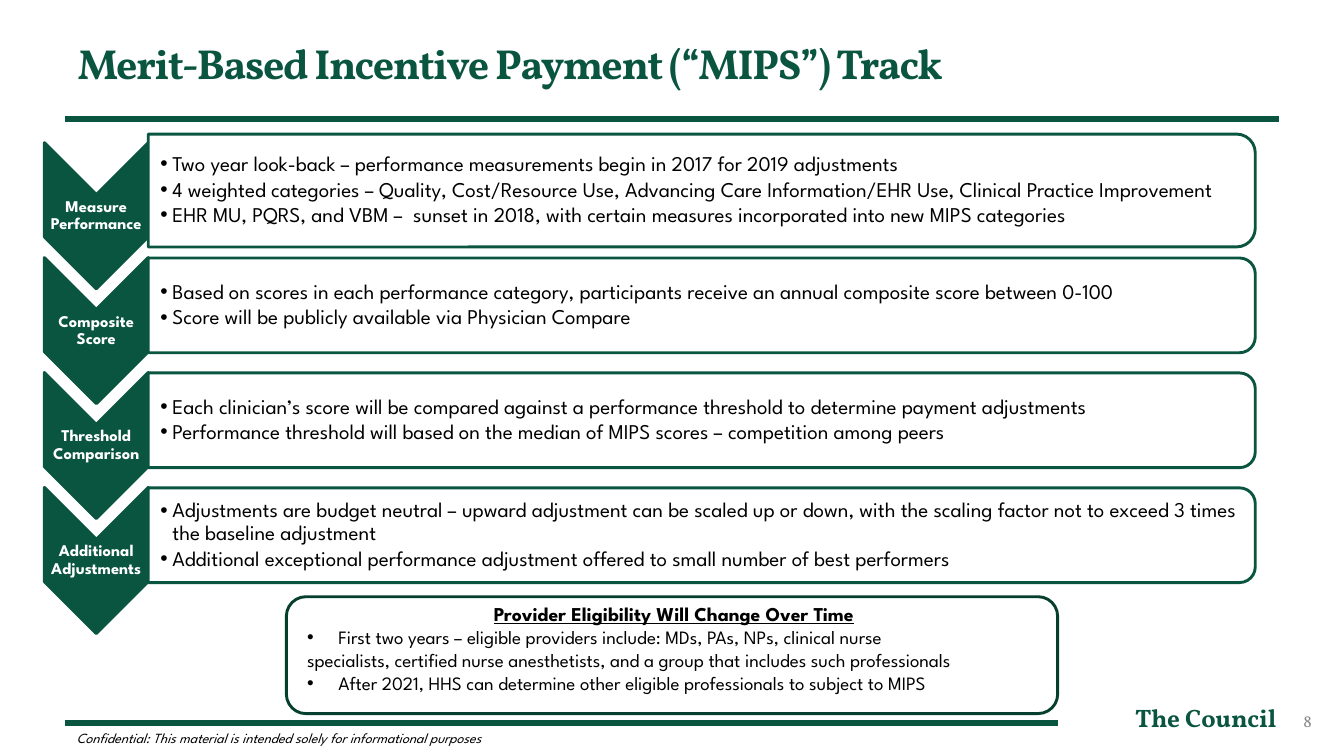
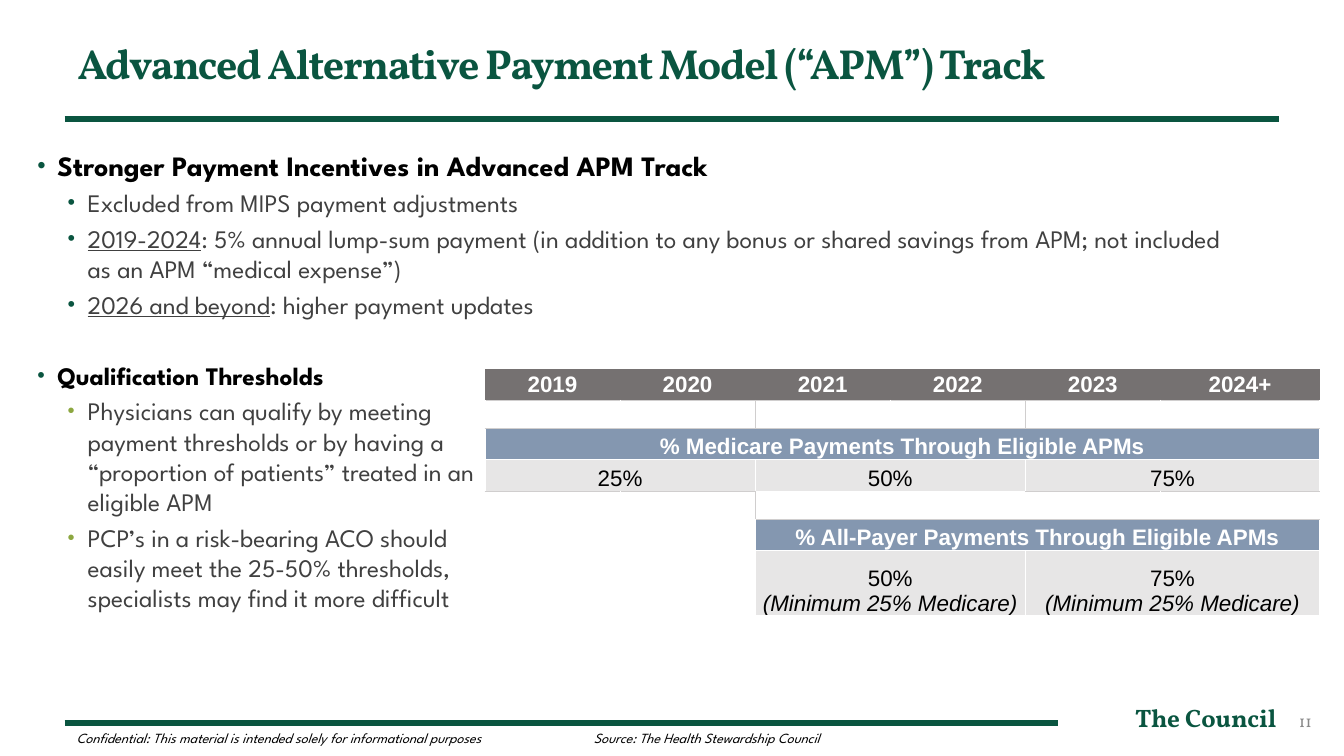
from lxml.etree import SubElement
from pptx import Presentation
from pptx.dml.color import RGBColor
from pptx.enum.shapes import MSO_CONNECTOR, MSO_SHAPE
from pptx.enum.text import MSO_ANCHOR, MSO_AUTO_SIZE, PP_ALIGN
from pptx.oxml.ns import qn
from pptx.util import Inches, Pt

GREEN = RGBColor(0x0A, 0x55, 0x40)
DARK_GREEN = RGBColor(0x07, 0x3F, 0x2F)
LIME = RGBColor(0x8C, 0xA7, 0x40)
BLACK = RGBColor(0x00, 0x00, 0x00)
WHITE = RGBColor(0xFF, 0xFF, 0xFF)
TEXT_GREY = RGBColor(0x40, 0x40, 0x40)
NUMBER_GREY = RGBColor(0x89, 0x89, 0x89)
HEADER_GREY = RGBColor(0x75, 0x71, 0x71)
CELL_GREY = RGBColor(0xE7, 0xE6, 0xE6)
BORDER_GREY = RGBColor(0xD0, 0xCE, 0xCE)
BAND_BLUE = RGBColor(0x84, 0x97, 0xB0)

SERIF = "Vollkorn"
SANS = "League Spartan"
TABLE_FONT = "Arial"
PLAIN_TABLE_STYLE = "{2D5ABB26-0587-4C30-8999-92F81FD0307C}"

STEPS = [
    ("Measure Performance", 1.12, [
        "Two year look-back – performance measurements begin in 2017 for 2019 adjustments",
        "4 weighted categories – Quality, Cost/Resource Use, Advancing Care Information/EHR Use, "
        "Clinical Practice Improvement",
        "EHR MU, PQRS, and VBM –  sunset in 2018, with certain measures incorporated into new "
        "MIPS categories"]),
    ("Composite Score", 0.94, [
        "Based on scores in each performance category, participants receive an annual composite "
        "score between 0-100",
        "Score will be publicly available via Physician Compare"]),
    ("Threshold Comparison", 0.94, [
        "Each clinician’s score will be compared against a performance threshold to determine "
        "payment adjustments",
        "Performance threshold will based on the median of MIPS scores – competition among peers"]),
    ("Additional Adjustments", 0.94, [
        "Adjustments are budget neutral – upward adjustment can be scaled up or down, with the "
        "scaling factor not to exceed 3 times the baseline adjustment",
        "Additional exceptional performance adjustment offered to small number of best performers"]),
]

ELIGIBILITY = [  # text, bulleted
    ("First two years – eligible providers include: MDs, PAs, NPs, clinical nurse", True),
    ("specialists, certified nurse anesthetists, and a group that includes such professionals", False),
    ("After 2021, HHS can determine other eligible professionals to subject to MIPS", True),
]

INCENTIVES = [  # underlined lead, rest
    ("", "Excluded from MIPS payment adjustments"),
    ("2019-2024", ": 5% annual lump-sum payment (in addition to any bonus or shared savings from "
                  "APM; not included as an APM “medical expense”)"),
    ("2026 and beyond", ": higher payment updates"),
]

QUALIFICATION = [
    ("", "Physicians can qualify by meeting payment thresholds or by having a “proportion of "
         "patients” treated in an eligible APM"),
    ("", "PCP’s in a risk-bearing ACO should easily meet the 25-50% thresholds, specialists may "
         "find it more difficult"),
]

MINIMUM = "(Minimum 25% Medicare)"
COLUMN_WIDTHS = [1.34] * 5 + [1.58]
ROW_HEIGHTS = [0.31, 0.28, 0.31, 0.31, 0.28, 0.31, 0.65]
MERGED_CELLS = [  # row, first column, columns spanned, fill, lines
    (2, 0, 6, BAND_BLUE, ["% Medicare Payments Through Eligible APMs"]),
    (3, 0, 2, CELL_GREY, ["25%"]),
    (3, 2, 2, CELL_GREY, ["50%"]),
    (3, 4, 2, CELL_GREY, ["75%"]),
    (5, 2, 4, BAND_BLUE, ["% All-Payer Payments Through Eligible APMs"]),
    (6, 2, 2, CELL_GREY, ["50%", MINIMUM]),
    (6, 4, 2, CELL_GREY, ["75%", MINIMUM]),
]
# Grey table rules: columns under each row edge, column edges within each row
GREY_ROW_EDGES = {1: range(6), 2: range(6), 4: (0, 1, 4, 5), 5: range(2, 6)}
GREY_COLUMN_EDGES = {1: (2, 4), 4: (2,)}


# Text
def style(font, name, size, color, bold=False, italic=False):
    font.name, font.size = name, Pt(size)
    font.bold, font.italic = bold, italic
    font.color.rgb = color


def next_paragraph(frame):
    return frame.add_paragraph() if frame.text else frame.paragraphs[0]


def set_indent(para, left, first=0):
    properties = para._p.get_or_add_pPr()
    properties.set("marL", str(Inches(left)))
    properties.set("indent", str(Inches(first)))
    return properties


def add_bullet(para, left, hang, color=None, percent=100):
    properties = set_indent(para, left, -hang)
    if color is not None:
        SubElement(SubElement(properties, qn("a:buClr")), qn("a:srgbClr"), val=str(color))
    SubElement(properties, qn("a:buSzPct"), val=str(percent * 1000))
    SubElement(properties, qn("a:buFont"), typeface="Arial")
    SubElement(properties, qn("a:buChar"), char="•")


def set_frame(frame, anchor=MSO_ANCHOR.TOP, margins=(0.1, 0.05, 0.1, 0.05)):
    frame.word_wrap = True
    frame.auto_size = MSO_AUTO_SIZE.NONE
    frame.vertical_anchor = anchor
    (frame.margin_left, frame.margin_top,
     frame.margin_right, frame.margin_bottom) = map(Inches, margins)
    return frame


def add_text_box(slide, area, **settings):
    box = slide.shapes.add_textbox(*map(Inches, area))
    return set_frame(box.text_frame, **settings)


def add_label(slide, area, text, font, align=PP_ALIGN.LEFT, **settings):
    para = add_text_box(slide, area, **settings).paragraphs[0]
    para.text, para.alignment = text, align
    style(para.font, *font)
    return para


def add_footnote(slide, left, width, text):
    add_label(slide, (left, 7.24, width, 0.17), text, (SANS, 10, BLACK, False, True),
              margins=(0, 0, 0, 0))


# Shapes
def place(shape, area):
    shape.left, shape.top, shape.width, shape.height = map(Inches, area)


def add_outlined(slide, kind, area, line, fill=None):
    shape = slide.shapes.add_shape(kind, *map(Inches, area))
    shape.shadow.inherit = False
    shape.line.color.rgb, shape.line.width = line, Pt(2.08)
    if fill is None:
        shape.fill.background()
    else:
        shape.fill.solid()
        shape.fill.fore_color.rgb = fill
    return shape


def add_turned(slide, kind, left, middle, width, height, fill):
    """Add a shape turned a quarter right; the lengths are those seen on the slide."""
    area = (left + (width - height) / 2, middle - width / 2, height, width)
    add_outlined(slide, kind, area, GREEN, fill).rotation = 90


def add_rule(slide, y, right):
    rule = slide.shapes.add_connector(
        MSO_CONNECTOR.STRAIGHT, Inches(0.64), Inches(y), Inches(right), Inches(y))
    rule.line.color.rgb, rule.line.width = GREEN, Pt(4.5)
    SubElement(rule._element.spPr, qn("a:effectLst"))


def add_page(deck, layout, title, number):
    """Add a slide with the shared title, rules and footer."""
    page = deck.slides.add_slide(deck.slide_layouts.get_by_name(layout))
    add_rule(page, 7.17, 10.49)
    add_rule(page, 1.18, 12.69)
    add_label(page, (10.33, 6.92, 2.43, 0.4), "The Council", (SERIF, 18, GREEN, True),
              PP_ALIGN.RIGHT)
    add_label(page, (10, 6.95, 3.11, 0.4), number, (SERIF, 12, NUMBER_GREY),
              PP_ALIGN.RIGHT, anchor=MSO_ANCHOR.MIDDLE)
    add_footnote(page, 0.76, 5,
                 "Confidential: This material is intended solely for informational purposes")
    heading = page.shapes.title
    place(heading, (0.67, 0.08, 12, 1.08))
    para = set_frame(heading.text_frame, MSO_ANCHOR.MIDDLE).paragraphs[0]
    para.text, para.alignment = title, PP_ALIGN.LEFT
    style(para.font, SERIF, 30, GREEN, True)
    para.font._rPr.set("spc", "-100")
    return page


# Merit-based track
def add_step(slide, middle, label, panel_height, points):
    add_turned(slide, MSO_SHAPE.CHEVRON, 0.44, middle, 1.03, 1.45, GREEN)
    add_label(slide, (0.44, middle - 0.22, 1.03, 0.44), label, (SANS, 11.7, WHITE, True),
              PP_ALIGN.CENTER, anchor=MSO_ANCHOR.MIDDLE,
              margins=(0.01,) * 4).line_spacing = 0.9
    panel_middle = middle - 0.25
    add_turned(slide, MSO_SHAPE.ROUND_2_SAME_RECTANGLE, 1.47, panel_middle,
               10.98, panel_height, WHITE)
    frame = add_text_box(slide, (1.47, panel_middle - 0.5, 10.93, 1),
                         anchor=MSO_ANCHOR.MIDDLE, margins=(0.12, 0.01, 0.01, 0.01))
    for point in points:
        para = next_paragraph(frame)
        para.text = point
        para.line_spacing, para.space_after = 0.9, Pt(2)
        add_bullet(para, 0.12, 0.12)
        style(para.font, SANS, 15, BLACK)


def add_eligibility(slide):
    box = add_outlined(slide, MSO_SHAPE.ROUNDED_RECTANGLE, (2.84, 5.92, 7.65, 1.16), DARK_GREEN)
    frame = set_frame(box.text_frame, margins=(0, 0, 0.11, 0))
    heading = frame.paragraphs[0]
    heading.text, heading.alignment = "Provider Eligibility Will Change Over Time", PP_ALIGN.CENTER
    set_indent(heading, 0.15)
    style(heading.font, SANS, 14, BLACK, True)
    heading.font.underline = True
    for text, bulleted in ELIGIBILITY:
        para = frame.add_paragraph()
        para.text, para.alignment = text, PP_ALIGN.LEFT
        if bulleted:
            add_bullet(para, 0.46, 0.31)
        else:
            set_indent(para, 0.15)
        style(para.font, SANS, 13.5, BLACK)


# Alternative payment track
def fill_list(body, area, heading, heading_size, points, point_bullet):
    place(body, area)
    frame = set_frame(body.text_frame)
    para = frame.paragraphs[0]
    para.text, para.space_before = heading, Pt(4)
    add_bullet(para, 0.2, 0.2, GREEN, 85)
    style(para.font, SANS, heading_size, BLACK, True)
    for lead, rest in points:
        para = frame.add_paragraph()
        para.level, para.space_before = 1, Pt(4)
        add_bullet(para, 0.5, 0.2, *point_bullet)
        style(para.font, SANS, 18, TEXT_GREY)
        if lead:
            span = para.add_run()
            span.text, span.font.underline = lead, True
        para.add_run().text = rest


def fill_cell(cell, lines, fill, color, bold, anchor):
    cell.fill.solid()
    cell.fill.fore_color.rgb = fill
    cell.vertical_anchor = anchor
    for line in lines:
        para = next_paragraph(cell.text_frame)
        para.text, para.alignment = line, PP_ALIGN.CENTER
        style(para.font, TABLE_FONT, 16, color, bold, line == MINIMUM)


def set_borders(cell, row, column, span):
    def row_color(edge):
        return BORDER_GREY if column in GREY_ROW_EDGES.get(edge, ()) else WHITE

    def column_color(edge):
        return BORDER_GREY if edge in GREY_COLUMN_EDGES.get(row, ()) else WHITE

    sides = {"a:lnL": column_color(column), "a:lnR": column_color(column + span),
             "a:lnT": row_color(row), "a:lnB": row_color(row + 1)}
    properties = cell._tc.get_or_add_tcPr()
    for position, (tag, color) in enumerate(sides.items()):
        line = SubElement(properties, qn(tag), w=str(Pt(0.5)))
        SubElement(SubElement(line, qn("a:solidFill")), qn("a:srgbClr"), val=str(color))
        properties.insert(position, line)


def add_thresholds(slide):
    frame = slide.shapes.add_table(
        len(ROW_HEIGHTS), len(COLUMN_WIDTHS), Inches(4.81), Inches(3.66),
        Inches(sum(COLUMN_WIDTHS)), Inches(sum(ROW_HEIGHTS)))
    table = frame.table
    table.first_row = table.horz_banding = False
    table._tbl.tblPr.find(qn("a:tableStyleId")).text = PLAIN_TABLE_STYLE
    for column, width in zip(table.columns, COLUMN_WIDTHS):
        column.width = Inches(width)
    for row, height in zip(table.rows, ROW_HEIGHTS):
        row.height = Inches(height)
    for cell in table.iter_cells():
        cell.margin_left = cell.margin_top = cell.margin_right = Inches(0.01)
        cell.margin_bottom = 0
        cell.fill.background()
    for column, year in enumerate(["2019", "2020", "2021", "2022", "2023", "2024+"]):
        fill_cell(table.cell(0, column), [year], HEADER_GREY, WHITE, True, MSO_ANCHOR.MIDDLE)
    for row, column, span, fill, lines in MERGED_CELLS:
        cell = table.cell(row, column)
        cell.merge(table.cell(row, column + span - 1))
        band = fill == BAND_BLUE
        fill_cell(cell, lines, fill, WHITE if band else BLACK, band, MSO_ANCHOR.BOTTOM)
    for row in range(1, len(ROW_HEIGHTS)):
        for column in range(len(COLUMN_WIDTHS)):
            cell = table.cell(row, column)
            if cell.is_spanned:
                continue
            set_borders(cell, row, column, cell.span_width if cell.is_merge_origin else 1)
            if not cell.text_frame.text:
                # Small end mark keeps blank rows at their set height
                cell.text_frame.paragraphs[0]._p.get_or_add_endParaRPr().set("sz", "1000")


def main():
    deck = Presentation()
    deck.slide_width, deck.slide_height = Inches(13.33), Inches(7.5)

    merit = add_page(deck, "Title Only", "Merit-Based Incentive Payment (“MIPS”) Track", "8")
    for index, step in enumerate(STEPS):
        add_step(merit, 2.14 + 1.14 * index, *step)
    add_eligibility(merit)

    alternative = add_page(deck, "Two Content",
                           "Advanced Alternative Payment Model (“APM”) Track", "11")
    fill_list(alternative.placeholders[1], (0.27, 1.42, 12, 1.78),
              "Stronger Payment Incentives in Advanced APM Track", 20, INCENTIVES, (GREEN, 85))
    fill_list(alternative.placeholders[2], (0.27, 3.52, 4.54, 3.4),
              "Qualification Thresholds", 18, QUALIFICATION, (LIME, 80))
    add_thresholds(alternative)
    add_footnote(alternative, 5.89, 5.67, "Source: The Health Stewardship Council")

    deck.save("out.pptx")


if __name__ == "__main__":
    main()
